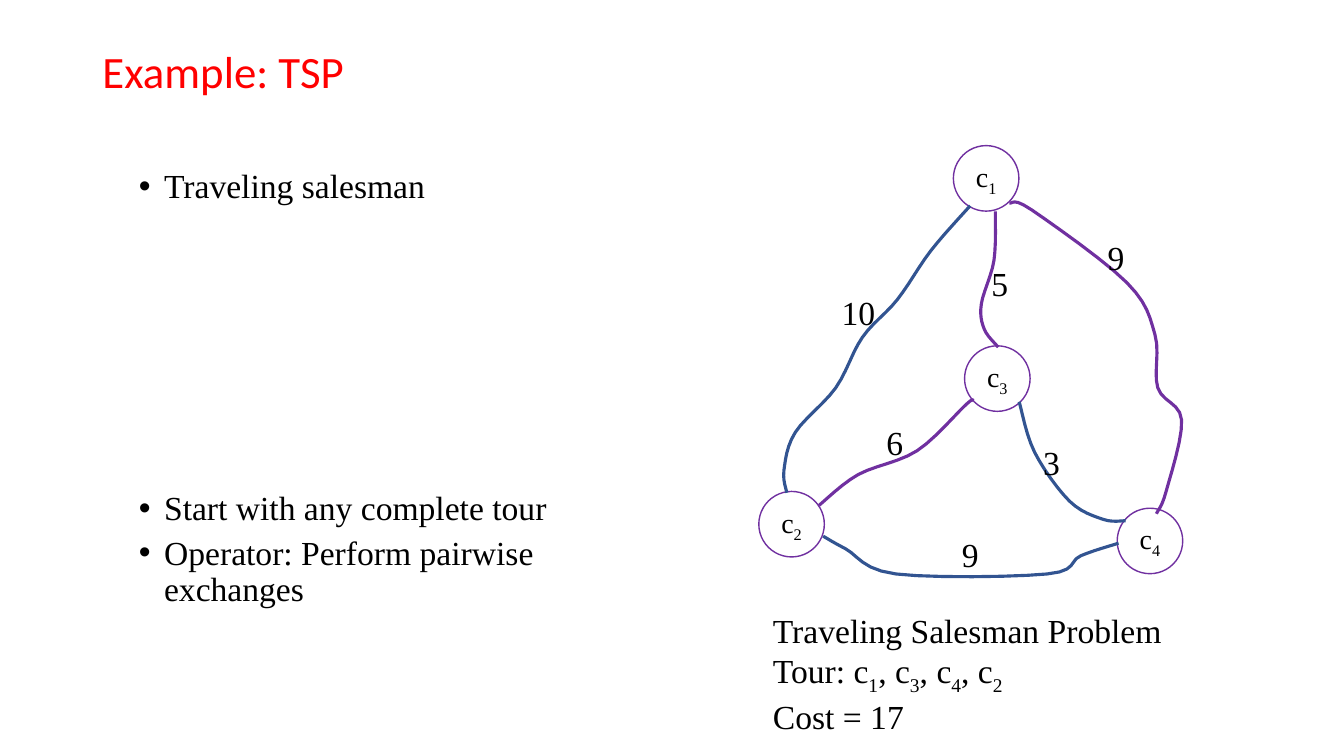
from lxml import etree
from pptx import Presentation
from pptx.dml.color import RGBColor
from pptx.enum.shapes import MSO_SHAPE as Shape
from pptx.enum.text import MSO_ANCHOR as Anchor, MSO_AUTO_SIZE as AutoSize, PP_ALIGN as Align
from pptx.oxml.ns import qn
from pptx.util import Pt

RED = RGBColor(0xFF, 0x00, 0x00)
BLACK = RGBColor(0x00, 0x00, 0x00)
WHITE = RGBColor(0xFF, 0xFF, 0xFF)
PURPLE = RGBColor(0x70, 0x30, 0xA0)
BLUE = RGBColor(0x32, 0x54, 0x91)
SERIF = "Times New Roman"
NODE_SIZE = 46.8
CURVE_STEPS = 6

# Cities: label, left, top
CITIES = [("c_1", 681, 104), ("c_3", 689, 247), ("c_2", 542, 351), ("c_4", 798, 363)]

# Roads: colour and the bends each one runs through
ROADS = [
    # c1 to c4
    (PURPLE, [(721, 145), (737, 150), (805, 202), (825, 239), (827, 277),
              (844, 300), (833, 351), (826, 367)]),
    # c1 to c3
    (PURPLE, [(711, 151), (710, 186), (701, 217), (703, 235), (713, 248)]),
    # c3 to c4
    (BLUE, [(728, 287), (739, 323), (764, 358), (788, 371), (804, 372)]),
    # c2 to c3
    (PURPLE, [(585, 361), (613, 339), (655, 322), (690, 289), (695, 286)]),
    # c1 to c2
    (BLUE, [(693, 147), (665, 179), (641, 214), (616, 241), (597, 277),
            (568, 309), (560, 336), (562, 352)]),
    # c2 to c4
    (BLUE, [(588, 383), (604, 392), (640, 410), (748, 410), (772, 397), (799, 388)]),
]

# Road lengths: text, left, top
LENGTHS = [("10", 594, 205), ("5", 701, 184), ("9", 784, 166),
           ("6", 626, 298), ("3", 738, 312), ("9", 680, 378)]

# Bulleted lines with the space before each
BULLETS = [("Traveling salesman", 0), ("Start with any complete tour", 204),
           ("Operator: Perform pairwise exchanges", 6)]
RESULT = ["Traveling Salesman Problem", "Tour: c_1, c_3, c_4, c_2", "Cost = 17"]


def place(shape, left, top, width, height):
    shape.left, shape.top, shape.width, shape.height = map(Pt, (left, top, width, height))


def write(paragraph, text, size, name=SERIF, color=BLACK):
    """Fill a paragraph; the digit after each underscore becomes a subscript."""
    first, *rest = text.split("_")
    paragraph.add_run().text = first
    for part in rest:
        subscript = paragraph.add_run()
        subscript.text = part[0]
        subscript._r.get_or_add_rPr().set("baseline", "-25000")
        if part[1:]:
            paragraph.add_run().text = part[1:]
    font = paragraph.font
    font.size, font.name, font.bold = Pt(size), name, False
    font.color.rgb = color


def paragraphs_for(frame, lines):
    """Pair each line with its own paragraph."""
    for index, line in enumerate(lines):
        yield (frame.add_paragraph() if index else frame.paragraphs[0]), line


def add_bullet(paragraph):
    properties = paragraph._p.get_or_add_pPr()
    properties.set("marL", str(Pt(18)))
    properties.set("indent", str(-Pt(18)))
    etree.SubElement(properties, qn("a:buFont")).set("typeface", "Arial")
    etree.SubElement(properties, qn("a:buChar")).set("char", "•")


def fill_title(title):
    place(title, 66, 11.5, 341, 82)
    frame = title.text_frame
    frame.auto_size, frame.vertical_anchor = AutoSize.NONE, Anchor.MIDDLE
    paragraph = frame.paragraphs[0]
    paragraph.alignment, paragraph.line_spacing = Align.LEFT, 0.9
    write(paragraph, "Example: TSP", 32, "Calibri", RED)


def fill_body(body):
    place(body, 92, 117.4, 371.5, 352)
    frame = body.text_frame
    frame.auto_size = AutoSize.NONE
    for paragraph, (text, space) in paragraphs_for(frame, BULLETS):
        paragraph.line_spacing, paragraph.space_before = 0.9, Pt(space)
        add_bullet(paragraph)
        write(paragraph, text, 24)


def add_city(slide, label, left, top):
    city = slide.shapes.add_shape(Shape.OVAL, Pt(left), Pt(top), Pt(NODE_SIZE), Pt(NODE_SIZE))
    city.shadow.inherit = False
    city.fill.solid()
    city.fill.fore_color.rgb = WHITE
    city.line.color.rgb, city.line.width = PURPLE, Pt(1)
    frame = city.text_frame
    frame.word_wrap, frame.vertical_anchor = False, Anchor.MIDDLE
    frame.paragraphs[0].alignment = Align.CENTER
    write(frame.paragraphs[0], label, 20)


def blend(before, start, end, after, t):
    """Catmull-Rom value between start and end."""
    return start + t / 2 * (end - before
                            + t * (2 * before - 5 * start + 4 * end - after)
                            + t * t * (3 * (start - end) + after - before))


def smooth(bends):
    """Points of a smooth curve through all bends."""
    padded = [bends[0], *bends, bends[-1]]
    curve = [bends[0]]
    for window in zip(padded, padded[1:], padded[2:], padded[3:]):
        for step in range(1, CURVE_STEPS + 1):
            curve.append(tuple(blend(*axis, step / CURVE_STEPS) for axis in zip(*window)))
    return curve


def add_road(slide, color, bends):
    start, *others = [(Pt(x), Pt(y)) for x, y in smooth(bends)]
    builder = slide.shapes.build_freeform(*start)
    builder.add_line_segments(others, close=False)
    road = builder.convert_to_shape()
    road.shadow.inherit = False
    road.fill.background()
    road.line.color.rgb, road.line.width = color, Pt(2.25)


def add_text(slide, lines, left, top, width, height):
    box = slide.shapes.add_textbox(Pt(left), Pt(top), Pt(width), Pt(height))
    frame = box.text_frame
    frame.word_wrap, frame.auto_size = True, AutoSize.SHAPE_TO_FIT_TEXT
    for paragraph, line in paragraphs_for(frame, lines):
        write(paragraph, line, 24)


def main():
    presentation = Presentation()
    presentation.slide_width, presentation.slide_height = Pt(960), Pt(540)
    slide = presentation.slides.add_slide(presentation.slide_layouts[1])

    # Title and list
    fill_title(slide.shapes.title)
    fill_body(slide.placeholders[1])

    # Road map
    for city in CITIES:
        add_city(slide, *city)
    for road in ROADS:
        add_road(slide, *road)
    for text, left, top in LENGTHS:
        add_text(slide, [text], left, top, 40, 36)

    # Tour and its cost
    add_text(slide, RESULT, 545, 432, 339, 94)

    presentation.save("out.pptx")


if __name__ == "__main__":
    main()
